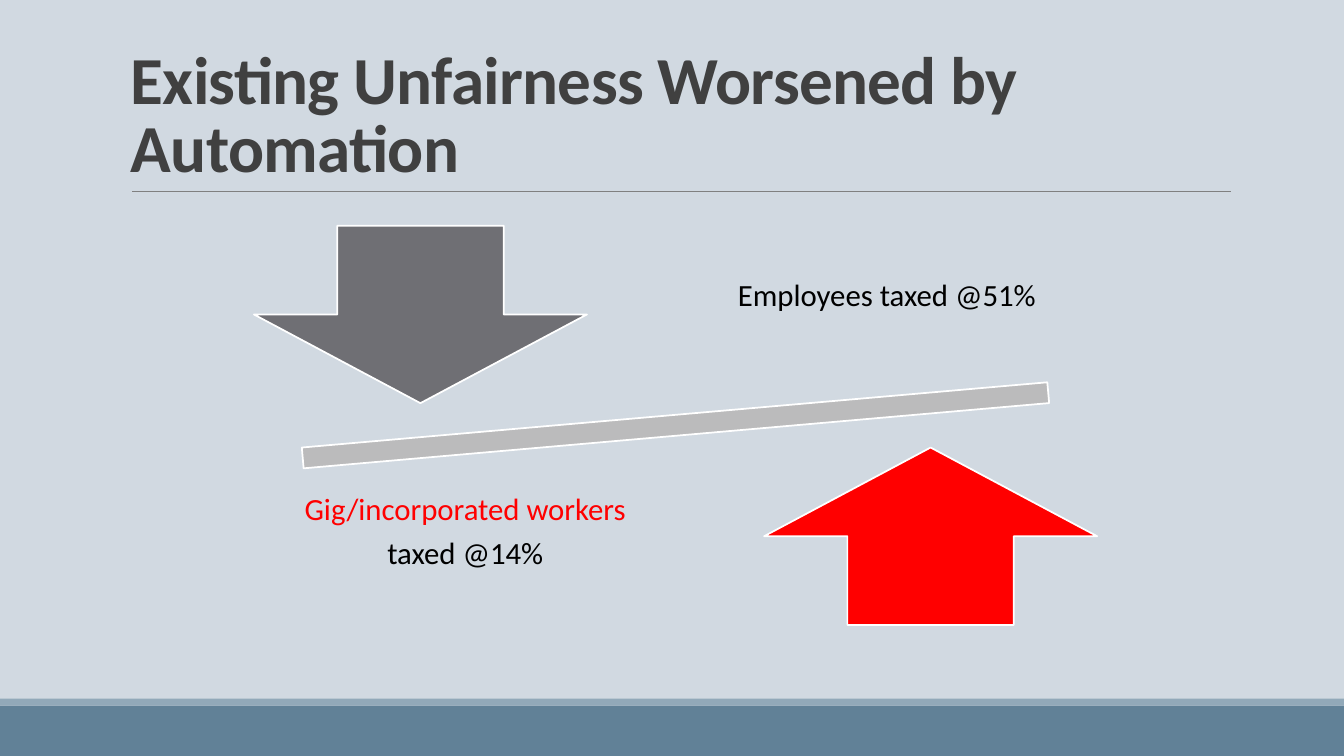
from lxml import etree
from pptx import Presentation
from pptx.dml.color import RGBColor
from pptx.enum.shapes import MSO_CONNECTOR, MSO_SHAPE
from pptx.enum.text import MSO_ANCHOR, PP_ALIGN
from pptx.oxml.ns import qn
from pptx.util import Inches, Pt

RECT, MINUS = MSO_SHAPE.RECTANGLE, MSO_SHAPE.MATH_MINUS
DOWN, UP = MSO_SHAPE.DOWN_ARROW, MSO_SHAPE.UP_ARROW
STRAIGHT = MSO_CONNECTOR.STRAIGHT
MIDDLE, BOTTOM = MSO_ANCHOR.MIDDLE, MSO_ANCHOR.BOTTOM
LEFT, CENTER = PP_ALIGN.LEFT, PP_ALIGN.CENTER
WIDE, HIGH = 13.33, 7.5
FONT = "Calibri"


def color(code):
    return RGBColor.from_string(code)


def within(box, share):
    x, y, w, h = box
    sx, sy, sw, sh = share
    return x + sx * w, y + sy * h, sw * w, sh * h


def add_form(slide, kind, box, fill, edge=None, turn=0):
    form = slide.shapes.add_shape(kind, *map(Inches, box))
    form.shadow.inherit = False
    form.rotation = turn
    form.fill.solid()
    form.fill.fore_color.rgb = color(fill)
    if edge:
        form.line.color.rgb = color(edge)
        form.line.width = Pt(1.25)
    else:
        form.line.fill.background()


def add_text(slide, box, lines, size, align, anchor, pitch, bold=False):
    frame = slide.shapes.add_textbox(*map(Inches, box)).text_frame
    frame.word_wrap = True
    frame.vertical_anchor = anchor
    frame.text = "\n".join(text for text, _ in lines)
    for para, (_, ink) in zip(frame.paragraphs, lines):
        para.alignment = align
        para.line_spacing = pitch
        font = para.runs[0].font
        font.name, font.size, font.bold = FONT, Pt(size), bold
        font.color.rgb = color(ink)
    return frame


def add_head(slide, box):
    x, y, w, h = box
    frame = add_text(slide, box,
                     [("Existing Unfairness Worsened by Automation", "404040")],
                     48, LEFT, BOTTOM, 0.85, True)
    frame.paragraphs[0].runs[0].font._element.set("spc", "-50")
    rule = slide.shapes.add_connector(
        STRAIGHT, *map(Inches, (x + 0.01 * w, y + h, x + 1.001 * w, y + h)))
    rule.line.color.rgb = color("808080")
    rule.line.width = Pt(0.5)
    etree.SubElement(rule._element.spPr, qn("a:effectLst"))


def add_foot(slide, box):
    add_form(slide, RECT, within(box, (0, 0.125, 1, 0.875)), "618197")
    add_form(slide, RECT, within(box, (0, 0, 1, 0.125)), "92A9B9")


def add_label(slide, box, lines):
    frame = add_text(slide, box, lines, 22, CENTER, MIDDLE, 0.9)
    frame.margin_left = frame.margin_right = Inches(0.17)
    frame.margin_top = frame.margin_bottom = Inches(0.17)
    for para in frame.paragraphs:
        para.space_after = Pt(7.7)


def add_scale(slide, box):
    forms = [
        (MINUS, (0, 0.4, 1, 0.2), "BBBBBC", 355),
        (DOWN, (0.086, 0.05, 0.327, 0.4), "6F6F74", 0),
        (UP, (0.587, 0.55, 0.327, 0.4), "FF0000", 0),
    ]
    for kind, share, fill, turn in forms:
        add_form(slide, kind, within(box, share), fill, "FFFFFF", turn)
    add_label(slide, within(box, (0.533, 0, 0.349, 0.42)),
              [("Employees taxed @51%", "000000")])
    add_label(slide, within(box, (0.101, 0.532, 0.385, 0.42)),
              [("Gig/incorporated workers", "FF0000"),
               ("taxed @14%", "000000")])


def main():
    deck = Presentation()
    deck.slide_width, deck.slide_height = Inches(WIDE), Inches(HIGH)
    slide = deck.slides.add_slide(deck.slide_layouts[6])
    slide.background.fill.solid()
    slide.background.fill.fore_color.rgb = color("D1D9E1")
    add_foot(slide, (0, 6.93, WIDE, HIGH - 6.93))
    add_head(slide, (1.2, 0.31, 11, 1.59))
    add_scale(slide, (1.65, 2.02, 10.1, 4.4))
    deck.save("out.pptx")


if __name__ == "__main__":
    main()
